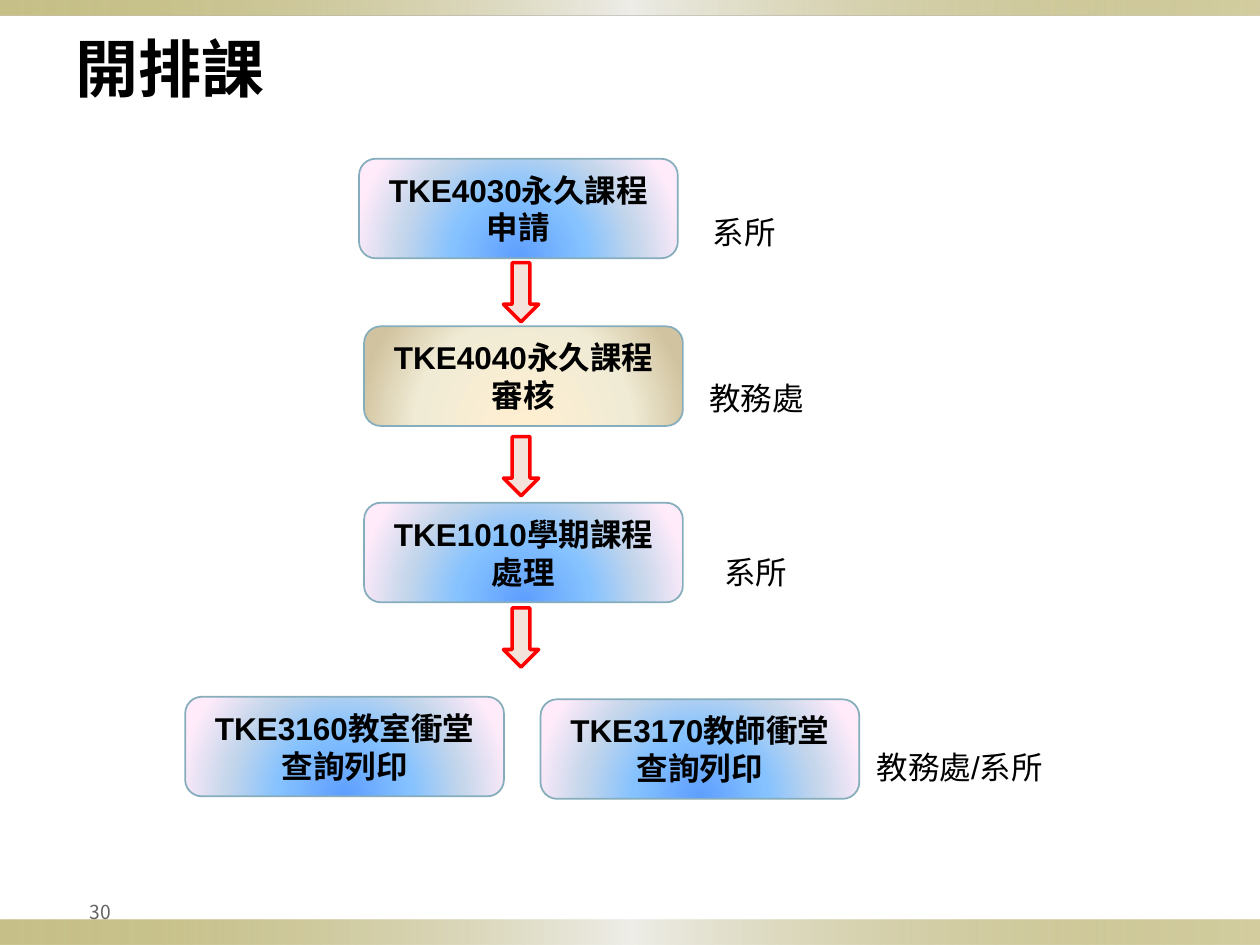
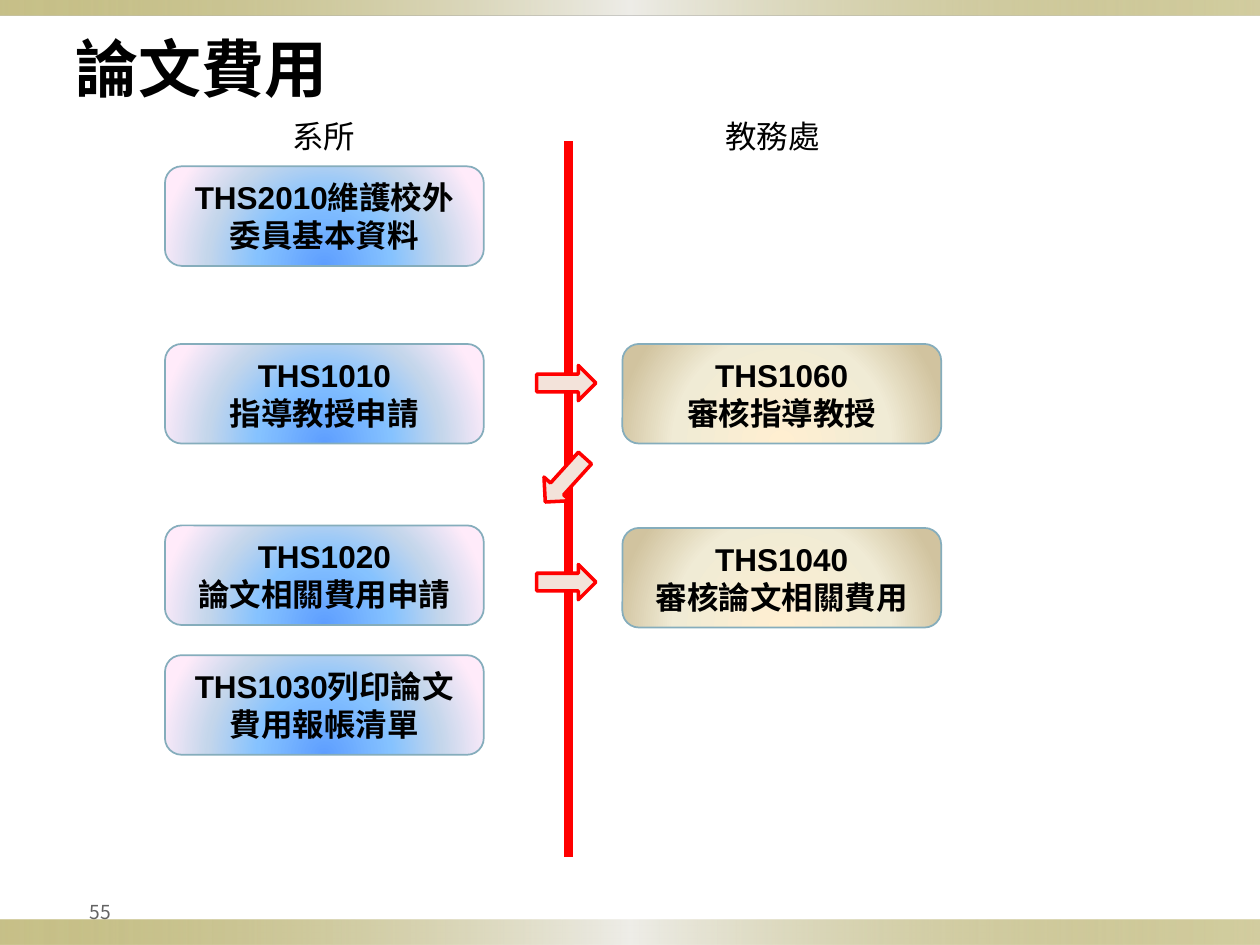
from dataclasses import dataclass
from typing import Any

from lxml.etree import SubElement
from pptx import Presentation
from pptx.dml.color import RGBColor
from pptx.enum.shapes import MSO_CONNECTOR, MSO_SHAPE as Preset
from pptx.enum.text import MSO_ANCHOR as Anchor, MSO_AUTO_SIZE as AutoSize, PP_ALIGN as Align
from pptx.oxml import parse_xml
from pptx.oxml.ns import nsdecls, qn
from pptx.util import Inches, Pt

# Colours and fonts
BLACK = RGBColor(0x00, 0x00, 0x00)
GREY = RGBColor(0x63, 0x63, 0x63)
RED = RGBColor(0xFF, 0x00, 0x00)
ARROW_FILL = RGBColor(0xF3, 0xE3, 0xDA)
BOX_LINE = RGBColor(0x85, 0xAD, 0xBC)
OLIVE = RGBColor(0x91, 0x84, 0x15)
PALE = RGBColor(0xEE, 0xED, 0xE8)
CJK_FONT = "Noto Sans CJK SC"

TITLE_FORMAT = {"size": Pt(36), "name": CJK_FONT, "bold": True}
NUMBER_FORMAT = {"size": Pt(11), "name": CJK_FONT, "bold": False}
LABEL_FORMAT = {"size": Pt(18), "name": "Arial", "bold": False}
BOX_FORMAT = LABEL_FORMAT | {"bold": True}


# Gradients
@dataclass(frozen=True)
class Stop:
    position: int
    color: RGBColor
    opacity: int = 100


LINEAR = '<a:lin ang="0" scaled="1"/>'
FROM_BOTTOM = '<a:path path="circle"><a:fillToRect l="50000" t="100000" r="50000"/></a:path>'
BAND_STOPS = (Stop(0, OLIVE, 50), Stop(50, PALE), Stop(100, OLIVE, 40))
DEPARTMENT_STOPS = (
    Stop(0, RGBColor(0x5E, 0x9E, 0xFF)),
    Stop(40, RGBColor(0x85, 0xC2, 0xFF)),
    Stop(70, RGBColor(0xC4, 0xD6, 0xEB)),
    Stop(100, RGBColor(0xFF, 0xEB, 0xFA)),
)
OFFICE_STOPS = (
    Stop(0, RGBColor(0xFF, 0xEF, 0xD1)),
    Stop(65, RGBColor(0xF0, 0xEB, 0xD5)),
    Stop(100, RGBColor(0xD1, 0xC3, 0x9F)),
)


# Repeated elements
@dataclass(frozen=True)
class StepBox:
    left: float
    top: float
    text: str
    stops: tuple[Stop, ...] = DEPARTMENT_STOPS


@dataclass(frozen=True)
class BlockArrow:
    left: float
    top: float
    rotation: float = 0


@dataclass(frozen=True)
class Label:
    left: float
    top: float
    width: float
    text: str


@dataclass(frozen=True)
class FlowSlide:
    title: str
    number: str
    boxes: tuple[StepBox, ...]
    arrows: tuple[BlockArrow, ...]
    labels: tuple[Label, ...]
    has_divider: bool = False


LEFT_COLUMN, RIGHT_COLUMN = 1.31, 4.94
FLOW_SLIDES = (
    FlowSlide(
        "開排課", "30",
        boxes=(
            StepBox(2.85, 1.26, "TKE4030永久課程申請"),
            StepBox(2.89, 2.59, "TKE4040永久課程審核", OFFICE_STOPS),
            StepBox(2.89, 3.99, "TKE1010學期課程處理"),
            StepBox(1.47, 5.53, "TKE3160教室衝堂查詢列印"),
            StepBox(4.29, 5.55, "TKE3170教師衝堂查詢列印"),
        ),
        arrows=tuple(BlockArrow(3.9, top, 90) for top in (2.18, 3.56, 4.92)),
        labels=(
            Label(5.56, 1.64, 0.71, "系所"),
            Label(5.53, 2.96, 0.96, "教務處"),
            Label(5.65, 4.34, 0.71, "系所"),
            Label(6.86, 5.89, 1.53, "教務處/系所"),
        ),
    ),
    FlowSlide(
        "論文費用", "55",
        boxes=(
            StepBox(LEFT_COLUMN, 1.32, "THS2010維護校外委員基本資料"),
            StepBox(LEFT_COLUMN, 2.73, "THS1010\n指導教授申請"),
            StepBox(LEFT_COLUMN, 4.17, "THS1020\n論文相關費用申請"),
            StepBox(LEFT_COLUMN, 5.2, "THS1030列印論文費用報帳清單"),
            StepBox(RIGHT_COLUMN, 2.73, "THS1060\n審核指導教授", OFFICE_STOPS),
            StepBox(RIGHT_COLUMN, 4.19, "THS1040\n審核論文相關費用", OFFICE_STOPS),
        ),
        arrows=(BlockArrow(4.26, 2.9), BlockArrow(4.25, 3.67, 132.1), BlockArrow(4.26, 4.48)),
        labels=(Label(2.22, 0.88, 0.71, "系所"), Label(5.66, 0.88, 0.96, "教務處")),
        has_divider=True,
    ),
)


def write_text(shape: Any, text: str, formats: dict[str, Any], color: RGBColor = BLACK,
               align: Align = Align.LEFT, anchor: Anchor = Anchor.MIDDLE) -> None:
    frame = shape.text_frame
    frame.text = text
    frame.word_wrap = True
    frame.auto_size = AutoSize.NONE
    frame.vertical_anchor = anchor
    for paragraph in frame.paragraphs:
        paragraph.alignment = align
        for run in paragraph.runs:
            for name, value in formats.items():
                setattr(run.font, name, value)
            run.font.color.rgb = color
            SubElement(run.font._element, qn("a:ea"), typeface=CJK_FONT)


def fill_gradient(shape: Any, stops: tuple[Stop, ...], direction: str) -> None:
    stop_xml = "".join(
        f'<a:gs pos="{stop.position * 1000}"><a:srgbClr val="{stop.color}">'
        f'<a:alpha val="{stop.opacity * 1000}"/></a:srgbClr></a:gs>'
        for stop in stops
    )
    gradient = parse_xml(
        f'<a:gradFill {nsdecls("a")} rotWithShape="1">'
        f"<a:gsLst>{stop_xml}</a:gsLst>{direction}</a:gradFill>"
    )
    shape.fill.background()
    properties = shape._element.spPr
    properties.replace(properties.find(qn("a:noFill")), gradient)


def add_preset(slide: Any, preset: Preset, left: float, top: float,
               width: float, height: float) -> Any:
    shape = slide.shapes.add_shape(
        preset, Inches(left), Inches(top), Inches(width), Inches(height))
    shape.shadow.inherit = False
    return shape


def set_line(shape: Any, color: RGBColor, points: float) -> None:
    shape.line.color.rgb = color
    shape.line.width = Pt(points)


def add_text_box(slide: Any, label: Label) -> Any:
    return slide.shapes.add_textbox(
        Inches(label.left), Inches(label.top), Inches(label.width), Inches(0.4))


def draw_frame(slide: Any, title: str, number: str) -> None:
    # Bands at the bottom and top edges
    for top, height in ((7.3, 0.2), (0, 0.12)):
        band = add_preset(slide, Preset.RECTANGLE, 0, top, 10, height)
        fill_gradient(band, BAND_STOPS, LINEAR)
        band.line.fill.background()

    # Title
    heading = slide.shapes.title
    heading.left, heading.top = Inches(0.5), Inches(0.05)
    heading.width, heading.height = Inches(9), Inches(0.97)
    write_text(heading, title, TITLE_FORMAT)

    # Page number
    number_box = add_text_box(slide, Label(0, 7.04, 0.93, number))
    for side in ("left", "top", "right", "bottom"):
        setattr(number_box.text_frame, f"margin_{side}", Inches(0.05))
    write_text(number_box, number, NUMBER_FORMAT, GREY, Align.RIGHT)


def draw_divider(slide: Any) -> None:
    divider = slide.shapes.add_connector(
        MSO_CONNECTOR.STRAIGHT, Inches(4.51), Inches(1.12), Inches(4.51), Inches(6.8))
    set_line(divider, RED, 5)
    SubElement(divider._element.spPr, qn("a:effectLst"))


def draw_box(slide: Any, box: StepBox) -> None:
    shape = add_preset(slide, Preset.ROUNDED_RECTANGLE, box.left, box.top, 2.53, 0.79)
    fill_gradient(shape, box.stops, FROM_BOTTOM)
    set_line(shape, BOX_LINE, 1)
    write_text(shape, box.text, BOX_FORMAT, align=Align.CENTER)


def draw_arrow(slide: Any, arrow: BlockArrow) -> None:
    shape = add_preset(slide, Preset.RIGHT_ARROW, arrow.left, arrow.top, 0.47, 0.28)
    shape.rotation = arrow.rotation
    shape.fill.solid()
    shape.fill.fore_color.rgb = ARROW_FILL
    set_line(shape, RED, 2)


def draw_label(slide: Any, label: Label) -> None:
    write_text(add_text_box(slide, label), label.text, LABEL_FORMAT, anchor=Anchor.TOP)


def main() -> None:
    presentation = Presentation()
    presentation.slide_width, presentation.slide_height = Inches(10), Inches(7.5)
    title_only = presentation.slide_layouts[5]
    for flow in FLOW_SLIDES:
        slide = presentation.slides.add_slide(title_only)
        draw_frame(slide, flow.title, flow.number)
        if flow.has_divider:
            draw_divider(slide)
        for box in flow.boxes:
            draw_box(slide, box)
        for arrow in flow.arrows:
            draw_arrow(slide, arrow)
        for label in flow.labels:
            draw_label(slide, label)
    presentation.save("out.pptx")


if __name__ == "__main__":
    main()
